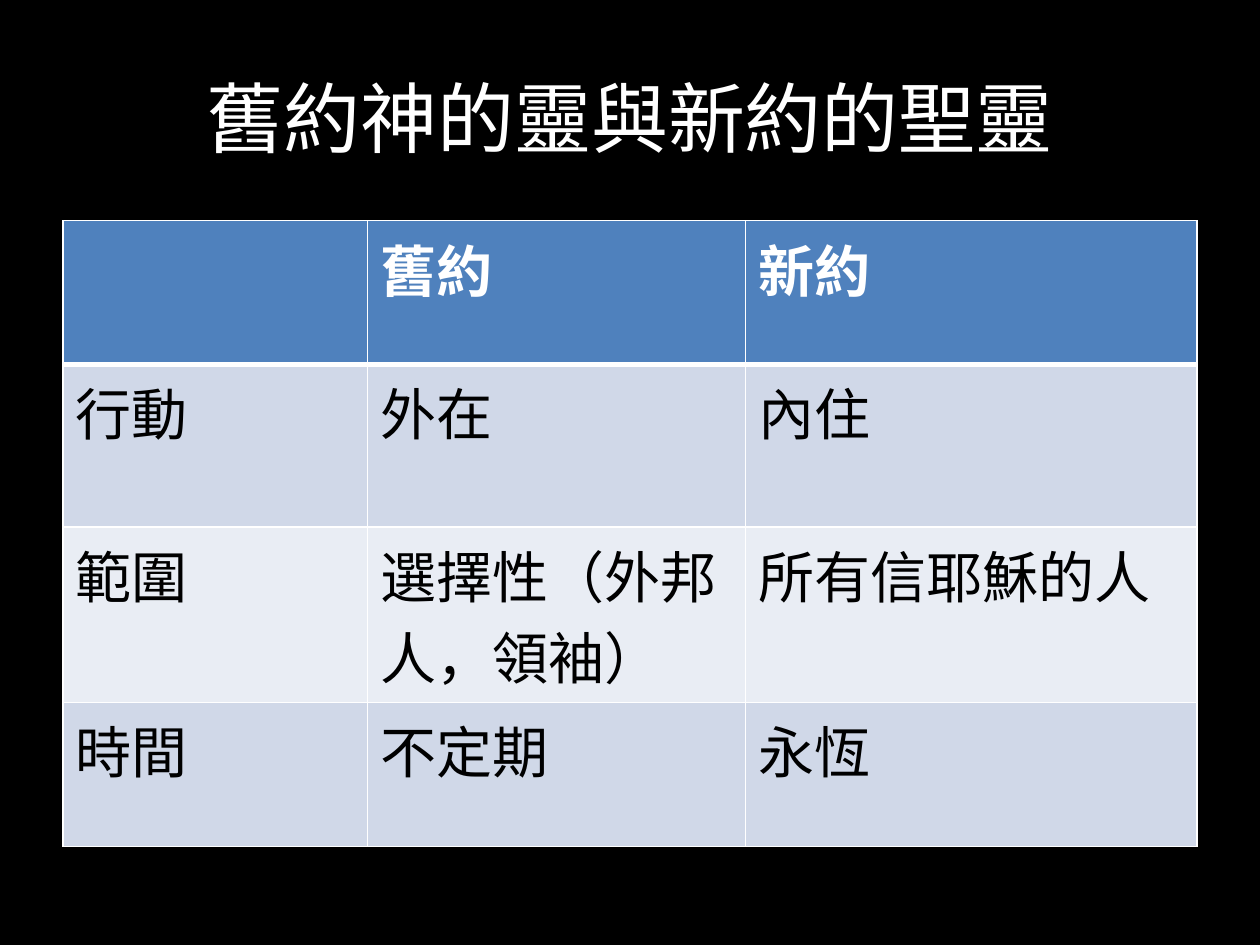
from lxml import etree
from pptx import Presentation
from pptx import util as u
from pptx.dml.color import RGBColor
from pptx.enum import text
from pptx.oxml.ns import qn

# Content
TITLE = "舊約神的靈與新約的聖靈"
ROWS = [
    ("", "舊約", "新約"),
    ("行動", "外在", "內住"),
    ("範圍", "選擇性（外邦人，領袖）", "所有信耶穌的人"),
    ("時間", "不定期", "永恆"),
]

# Layout in cm; the third row holds two lines of text
SLIDE = (25.4, 19.05)
TITLE_BOX = (1.27, 0.76, 22.86, 3.18)
TABLE_POS = (1.27, 4.45)
COL_WIDTHS = (6.14, 7.62, 9.1)
ROW_HEIGHTS = (2.9, 3.27, 3.54, 2.9)

THEME = {
    "bg": "000000",
    "header": "4F81BD",
    "bands": ("D0D8E8", "E9EDF4"),
    "border": "FFFFFF",
    "title": {"name": "Calibri", "size": u.Pt(44), "color": "FFFFFF"},
    "head": {"name": "Calibri", "size": u.Pt(32), "bold": True, "color": "FFFFFF"},
    "body": {"name": "Calibri", "size": u.Pt(32), "bold": False, "color": "000000"},
}


def cm(values):
    return [u.Cm(v) for v in values]


def paint(fill, color):
    fill.solid()
    fill.fore_color.rgb = RGBColor.from_string(color)


def write(p, words, fmt):
    """Put one formatted run in a paragraph; an empty one keeps its size."""
    font = p.font
    if words:
        r = p.add_run()
        r.text = words
        font = r.font
    for key, value in fmt.items():
        if key == "color":
            font.color.rgb = RGBColor.from_string(value)
        else:
            setattr(font, key, value)


def add_borders(cell, widths):
    """Cell borders must come before the fill in the cell properties."""
    tc_pr = cell._tc.get_or_add_tcPr()
    for i, (side, width) in enumerate(widths.items()):
        ln = etree.Element(qn(f"a:ln{side}"), w=str(u.Pt(width)))
        fill = etree.SubElement(ln, qn("a:solidFill"))
        etree.SubElement(fill, qn("a:srgbClr"), val=THEME["border"])
        tc_pr.insert(i, ln)


prs = Presentation()
prs.slide_width, prs.slide_height = cm(SLIDE)
s = prs.slides.add_slide(prs.slide_layouts[6])
paint(s.background.fill, THEME["bg"])

# Title
tf = s.shapes.add_textbox(*cm(TITLE_BOX)).text_frame
tf.word_wrap = True
tf.vertical_anchor = text.MSO_ANCHOR.MIDDLE
p = tf.paragraphs[0]
p.alignment = text.PP_ALIGN.CENTER
write(p, TITLE, THEME["title"])

# Comparison table
size = (sum(COL_WIDTHS), sum(ROW_HEIGHTS))
table = s.shapes.add_table(len(ROWS), len(COL_WIDTHS), *cm(TABLE_POS + size)).table
for col, width in zip(table.columns, cm(COL_WIDTHS)):
    col.width = width
for row, height in zip(table.rows, cm(ROW_HEIGHTS)):
    row.height = height

for i, words_in_row in enumerate(ROWS):
    color = THEME["bands"][(i - 1) % 2] if i else THEME["header"]
    fmt = THEME["body"] if i else THEME["head"]
    widths = {"L": 1, "R": 1, "T": 3 if i == 1 else 1, "B": 1 if i else 3}
    for j, words in enumerate(words_in_row):
        cell = table.cell(i, j)
        paint(cell.fill, color)
        add_borders(cell, widths)
        write(cell.text_frame.paragraphs[0], words, fmt)

prs.save("out.pptx")
